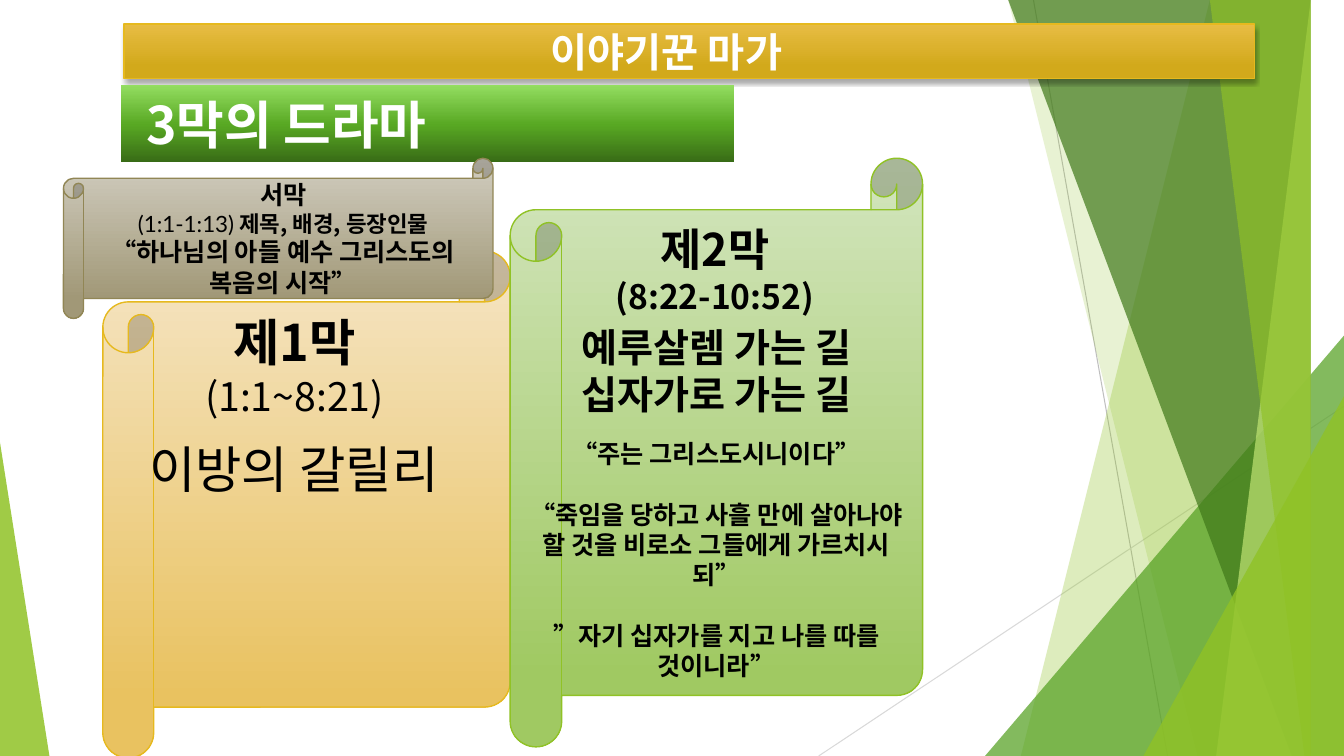
"""Build a slide on Mark as a storyteller: a drama in three acts."""
from lxml import etree
from pptx import Presentation
from pptx.dml.color import RGBColor
from pptx.enum.shapes import MSO_CONNECTOR, MSO_SHAPE
from pptx.enum.text import MSO_ANCHOR, PP_ALIGN
from pptx.oxml.ns import qn
from pptx.util import Inches, Pt

RECT, TRIANGLE = MSO_SHAPE.RECTANGLE, MSO_SHAPE.ISOSCELES_TRIANGLE
SCROLL = MSO_SHAPE.HORIZONTAL_SCROLL
STRAIGHT = MSO_CONNECTOR.STRAIGHT
CENTER, LEFT = PP_ALIGN.CENTER, PP_ALIGN.LEFT
TOP, MIDDLE = MSO_ANCHOR.TOP, MSO_ANCHOR.MIDDLE

COLORS = {
    "white": "FFFFFF", "black": "000000", "gray": "BFBFBF", "pale_gray": "D9D9D9",
    "lime": "90C226", "green": "54A021", "forest": "3F7819", "light_lime": "C0E474",
    "gold": "E6B91E", "gold_top": "E7BC43", "gold_bottom": "D2A91B",
    "leaf_dark": "386B16", "leaf": "58A823", "leaf_light": "94DE61",
    "sand": "F5E5C5", "amber": "E9C260", "mint": "D3E5BE", "moss": "A0C962",
    "stone_light": "D1CDC0", "stone": "A19877", "stone_line": "918655",
}


class SlideBuilder:
    """Hold the deck style and the current slide."""

    font = "Noto Sans CJK KR"
    latin = "Lato"
    leading = 1.2

    def __init__(self, prs):
        self.slide = prs.slides.add_slide(prs.slide_layouts[6])
        self.shapes = self.slide.shapes

    def color(self, name):
        return RGBColor.from_string(COLORS[name])

    def line(self, x1, y1, x2, y2, color):
        c = self.shapes.add_connector(STRAIGHT, Inches(x1), Inches(y1), Inches(x2), Inches(y2))
        c.line.color.rgb = self.color(color)
        c.line.width = Pt(0.75)
        etree.SubElement(c._element.spPr, qn("a:effectLst"))

    def tint(self, s, color, alpha):
        s.shadow.inherit = False
        s.fill.solid()
        s.fill.fore_color.rgb = self.color(color)
        clr = s._element.spPr.find(qn("a:solidFill"))[0]
        etree.SubElement(clr, qn("a:alpha"), val=str(alpha * 1000))
        s.line.fill.background()

    def facet(self, points, color, alpha):
        fb = self.shapes.build_freeform(*points[0], scale=Inches(1))
        fb.add_line_segments(points[1:], close=True)
        self.tint(fb.convert_to_shape(), color, alpha)

    def triangle(self, box, apex, color, alpha):
        s = self.shapes.add_shape(TRIANGLE, *map(Inches, box))
        s.adjustments[0] = apex
        self.tint(s, color, alpha)

    def panel(self, kind, box, stops, angle=270, line=None):
        s = self.shapes.add_shape(kind, *map(Inches, box))
        s.shadow.inherit = False
        s.fill.gradient()
        s.fill.gradient_angle = angle
        gs_list = s._element.spPr.find(qn("a:gradFill")).find(qn("a:gsLst"))
        for gs in list(gs_list):
            gs_list.remove(gs)
        for pos, color in stops:
            gs = etree.SubElement(gs_list, qn("a:gs"), pos=str(pos * 1000))
            etree.SubElement(gs, qn("a:srgbClr"), val=COLORS[color])
        if line:
            s.line.color.rgb = self.color(line)
            s.line.width = Pt(1)
        else:
            s.line.fill.background()
        return s

    def drop_shadow(self, s):
        effects = s._element.spPr.find(qn("a:effectLst"))
        shadow = etree.SubElement(effects, qn("a:outerShdw"), blurRad=str(Pt(3)),
                                  dist=str(Pt(2)), dir="5400000", rotWithShape="0")
        clr = etree.SubElement(shadow, qn("a:srgbClr"), val=COLORS["black"])
        etree.SubElement(clr, qn("a:alpha"), val="35000")

    def set_font(self, font, name, bold):
        font.name, font.bold = name, bold
        etree.SubElement(font._element, qn("a:ea"), typeface=self.font)

    def fill_text(self, s, paragraphs, color="black", align=CENTER, anchor=MIDDLE):
        tf = s.text_frame
        tf.word_wrap = True
        tf.vertical_anchor = anchor
        for i, (content, size, bold, gap) in enumerate(paragraphs):
            p = tf.paragraphs[0] if i == 0 else tf.add_paragraph()
            p.alignment = align
            p.line_spacing = Pt(round(size * self.leading, 1))
            p.space_before = Pt(gap)
            p.font.size = Pt(size)
            p.font.color.rgb = self.color(color)
            if isinstance(content, str):
                self.set_font(p.font, self.font, bold)
                p.add_run().text = content
                continue
            for text, name, run_bold in content:
                r = p.add_run()
                r.text = text
                self.set_font(r.font, name, run_bold)
        return tf

    def text(self, box, paragraphs):
        self.fill_text(self.shapes.add_textbox(*map(Inches, box)), paragraphs, anchor=TOP)


def draw_backdrop(b):
    """Draw the green facets along both edges."""
    b.line(10.25, 0, 11.58, 7.5, "gray")
    b.line(13.33, 4.03, 8.12, 7.5, "pale_gray")
    right, bottom = 13.33, 7.5

    def band(top_x, bottom_x, color, alpha):
        b.facet([(top_x, 0), (right, 0), (right, bottom), (bottom_x, bottom)], color, alpha)

    band(12.28, 10.04, "lime", 30)
    band(10.5, 11.83, "lime", 20)
    b.triangle((9.77, 3.33, 3.56, 4.17), 1, "green", 72)
    band(10.21, 12.91, "forest", 70)
    band(13.03, 11.92, "light_lime", 70)
    band(11.96, 13.18, "lime", 65)
    b.triangle((11.34, 3.93, 1.99, 3.57), 1, "lime", 80)
    b.triangle((0, 4.39, 0.49, 3.11), 0, "lime", 85)


def draw_headings(b):
    """Draw the title bar and the subtitle bar."""
    title = b.panel(RECT, (1.23, 0.24, 11.21, 0.54),
                    [(0, "gold_top"), (78, "gold_bottom")], line="gold")
    b.drop_shadow(title)
    tf = b.fill_text(title, [("이야기꾼 마가", 28.8, True, 0)], "white")
    tf.margin_right = Inches(0.55)
    subtitle = b.panel(RECT, (1.2, 0.84, 6.08, 0.77),
                       [(0, "leaf_dark"), (48, "leaf"), (100, "leaf_light")], angle=90)
    tf = b.fill_text(subtitle, [("3막의 드라마", 37, True, 0)], "white", LEFT)
    tf.margin_left = Inches(0.25)


def draw_acts(b):
    """Draw the scrolls of the prologue and the acts with their text."""
    b.panel(SCROLL, (1.02, 2.49, 4.04, 5.03), [(0, "sand"), (88, "amber")], line="gold")
    b.panel(SCROLL, (5.06, 1.57, 4.09, 5.84), [(0, "mint"), (88, "moss")], line="lime")
    b.text((1.33, 3.04, 3.18, 1.78),
           [("제1막", 36, True, 0), ("(1:1~8:21)", 28, False, 0)])
    b.text((5.88, 2.15, 2.42, 1.04),
           [("제2막", 32, True, 0), ("(8:22-10:52)", 24, True, 0)])
    b.text((1.2, 4.3, 3.43, 0.71), [("이방의 갈릴리", 36, False, 0)])
    b.text((5.47, 3.16, 3.27, 1.35),
           [("예루살렘 가는 길", 28, True, 0), ("십자가로 가는 길", 28, True, 0)])
    prologue = b.panel(SCROLL, (0.63, 1.57, 4.26, 1.59),
                       [(0, "stone_light"), (88, "stone")], line="stone_line")
    b.fill_text(prologue, [
        ("서막", 18, True, 0),
        ([("(1:1-1:13)", b.latin, False), (" 제목, 배경, 등장인물", b.font, True)], 16, True, 0),
        ("“하나님의 아들 예수 그리스도의 복음의 시작”", 18, True, 0),
    ])
    b.text((5.06, 4.3, 4.09, 2.52), [
        ("“주는 그리스도시니이다”", 18, True, 0),
        ("“죽임을 당하고 사흘 만에 살아나야 할 것을 비로소 그들에게 가르치시되”", 18, True, 21.6),
        ("”자기 십자가를 지고 나를 따를 것이니라”", 18, True, 21.6),
    ])


def main():
    """Build and save the deck."""
    prs = Presentation()
    prs.slide_width, prs.slide_height = Inches(13.33), Inches(7.5)
    b = SlideBuilder(prs)
    draw_backdrop(b)
    draw_headings(b)
    draw_acts(b)
    prs.save("out.pptx")


if __name__ == "__main__":
    main()
